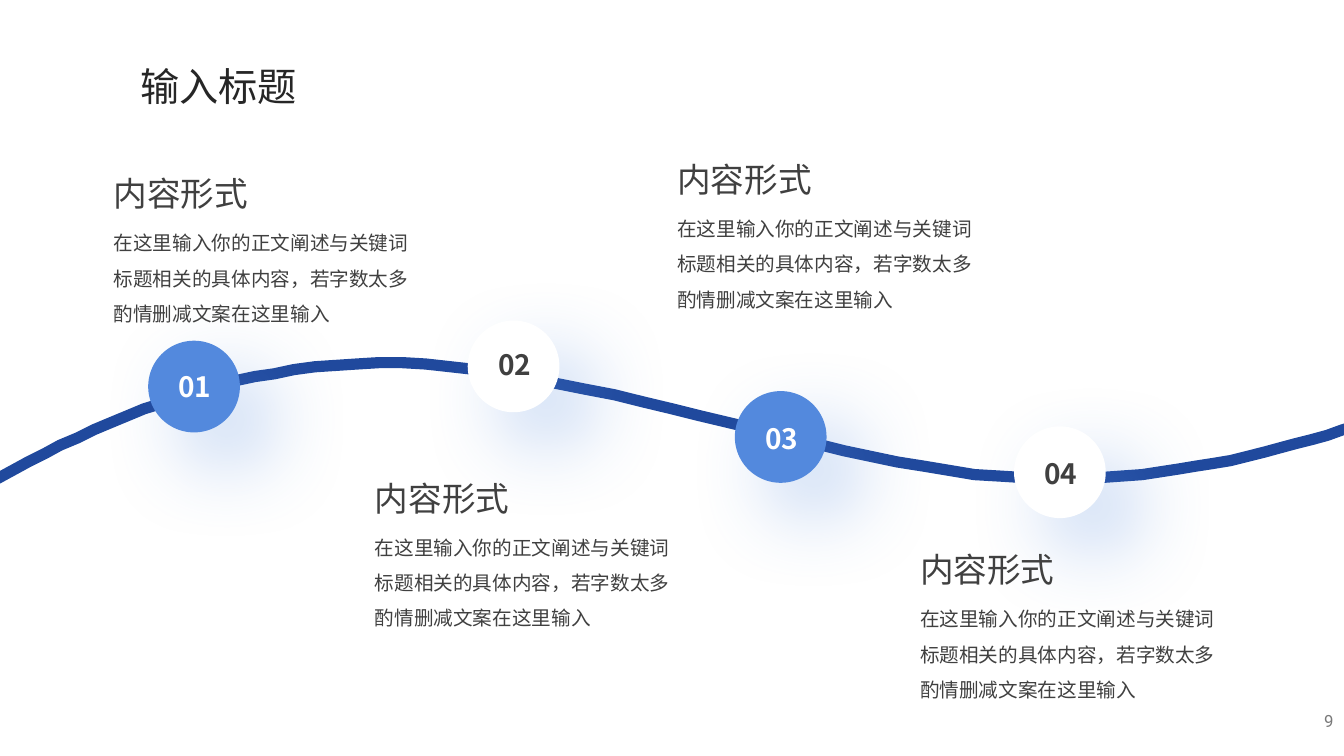
from lxml.etree import SubElement
from pptx import Presentation
from pptx.dml.color import RGBColor
from pptx.enum.shapes import MSO_SHAPE
from pptx.enum.text import MSO_ANCHOR, MSO_AUTO_SIZE, PP_ALIGN
from pptx.oxml.ns import qn
from pptx.util import Pt

COLORS = {"curve": "20499D", "blue": "5389DD", "white": "FFFFFF",
          "text": "404040", "title": "262626", "page": "797979"}
CJK = "Noto Sans CJK SC"
HEADING = "内容形式"
BODY = "在这里输入你的正文阐述与关键词标题相关的具体内容，若字数太多酌情删减文案在这里输入"

# Text formats: font attributes plus a colour key
TITLE = {"size": Pt(28), "name": CJK, "bold": False, "color": "title"}
HEAD = {"size": Pt(24), "name": CJK, "color": "text"}
COPY = {"size": Pt(14), "name": CJK, "color": "text"}
PAGE = {"size": Pt(12), "name": "Roboto", "color": "page"}
NUMBER = {"size": Pt(20), "name": CJK, "bold": True}

# Cubic segments: each one starts where the previous one ends
CURVE_START = (-36, 360)
CURVE = [((53.28, 311.04), (143.28, 262.08), (270.72, 259.2)),
         ((398.16, 255.6), (603.36, 336.96), (728.64, 341.28)),
         ((853.92, 345.6), (938.16, 315.36), (1022.4, 285.12))]
CURVE_STEPS = 24
CIRCLE = 65.5

# Circle corner, number drop inside it, fill, number colour, text corner
STEPS = [((105.84, 243.36), 17.3, "blue", "white", (74.16, 120.24)),
         ((334.08, 228.96), 15.8, "white", "text", (260.64, 337.68)),
         ((524.88, 279.36), 18, "blue", "white", (476.64, 110.16)),
         ((724.32, 304.56), 18, "white", "text", (650.16, 388.8))]


def rgb(key):
    return RGBColor.from_string(COLORS[key])


def write(tf, text, style, align=PP_ALIGN.LEFT, anchor=MSO_ANCHOR.TOP,
          wrap=True, spacing=None):
    frame = {"word_wrap": wrap, "vertical_anchor": anchor,
             "auto_size": MSO_AUTO_SIZE.NONE}
    for name, value in frame.items():
        setattr(tf, name, value)
    p = tf.paragraphs[0]
    p.alignment, p.line_spacing = align, spacing
    r = p.add_run()
    r.text = text
    for name, value in style.items():
        if name == "color":
            r.font.color.rgb = rgb(value)
        else:
            setattr(r.font, name, value)
    # East Asian typeface
    SubElement(r.font._element, qn("a:ea"), typeface=style["name"])


def add_text(s, box, text, style, **layout):
    sp = s.shapes.add_textbox(*map(Pt, box))
    write(sp.text_frame, text, style, **layout)


def add_title(s, box, text):
    sp = s.shapes.title
    for name, value in zip(("left", "top", "width", "height"), box):
        setattr(sp, name, Pt(value))
    write(sp.text_frame, text, TITLE, wrap=False)


def bezier(points, t):
    weights = ((1 - t) ** 3, 3 * t * (1 - t) ** 2, 3 * t * t * (1 - t), t ** 3)
    return tuple(sum(w * pt[axis] for w, pt in zip(weights, points))
                 for axis in (0, 1))


def add_curve(s):
    start, vertices = CURVE_START, []
    for segment in CURVE:
        vertices += [bezier((start, *segment), i / CURVE_STEPS)
                     for i in range(1, CURVE_STEPS + 1)]
        start = segment[-1]
    fb = s.shapes.build_freeform(*CURVE_START, scale=Pt(1))
    fb.add_line_segments(vertices, close=False)
    sp = fb.convert_to_shape()
    sp.shadow.inherit = False
    sp.fill.background()
    sp.line.color.rgb = rgb("curve")
    sp.line.width = Pt(8)


def add_soft_shadow(sp):
    sp.shadow.inherit = False
    effects = sp._element.spPr.find(qn("a:effectLst"))
    shadow = SubElement(effects, qn("a:outerShdw"), blurRad=str(Pt(60)),
                        dist=str(Pt(33)), dir=str(45 * 60000),
                        algn="tl", rotWithShape="0")
    color = SubElement(shadow, qn("a:srgbClr"), val=COLORS["blue"])
    SubElement(color, qn("a:alpha"), val="34000")


def add_circle(s, corner, drop, fill, color, number):
    x, y = corner
    sp = s.shapes.add_shape(MSO_SHAPE.OVAL, Pt(x), Pt(y), Pt(CIRCLE), Pt(CIRCLE))
    sp.fill.solid()
    sp.fill.fore_color.rgb = rgb(fill)
    sp.line.fill.background()
    add_soft_shadow(sp)
    add_text(s, (x + 4.3, y + drop, 58.3, 31.5), f"{number:02}",
             {**NUMBER, "color": color}, align=PP_ALIGN.CENTER)


def add_block(s, corner):
    x, y = corner
    add_text(s, (x, y, 111.6, 36), HEADING, HEAD, wrap=False)
    add_text(s, (x, y + 33, 225.4, 83.5), BODY, COPY, spacing=1.5)


def main():
    prs = Presentation()
    prs.slide_width, prs.slide_height = Pt(960), Pt(540)
    s = prs.slides.add_slide(prs.slide_layouts[5])
    add_title(s, (92.88, 41.04, 127.44, 41.04), "输入标题")

    # Road with four numbered stops
    add_curve(s)
    for number, (corner, drop, fill, color, _) in enumerate(STEPS, 1):
        add_circle(s, corner, drop, fill, color, number)

    # Text of each stop
    for *_, corner in STEPS:
        add_block(s, corner)

    # Page number
    add_text(s, (743.76, 500.4, 216, 28.8), "9", PAGE,
             align=PP_ALIGN.RIGHT, anchor=MSO_ANCHOR.MIDDLE)
    prs.save("out.pptx")


if __name__ == "__main__":
    main()
